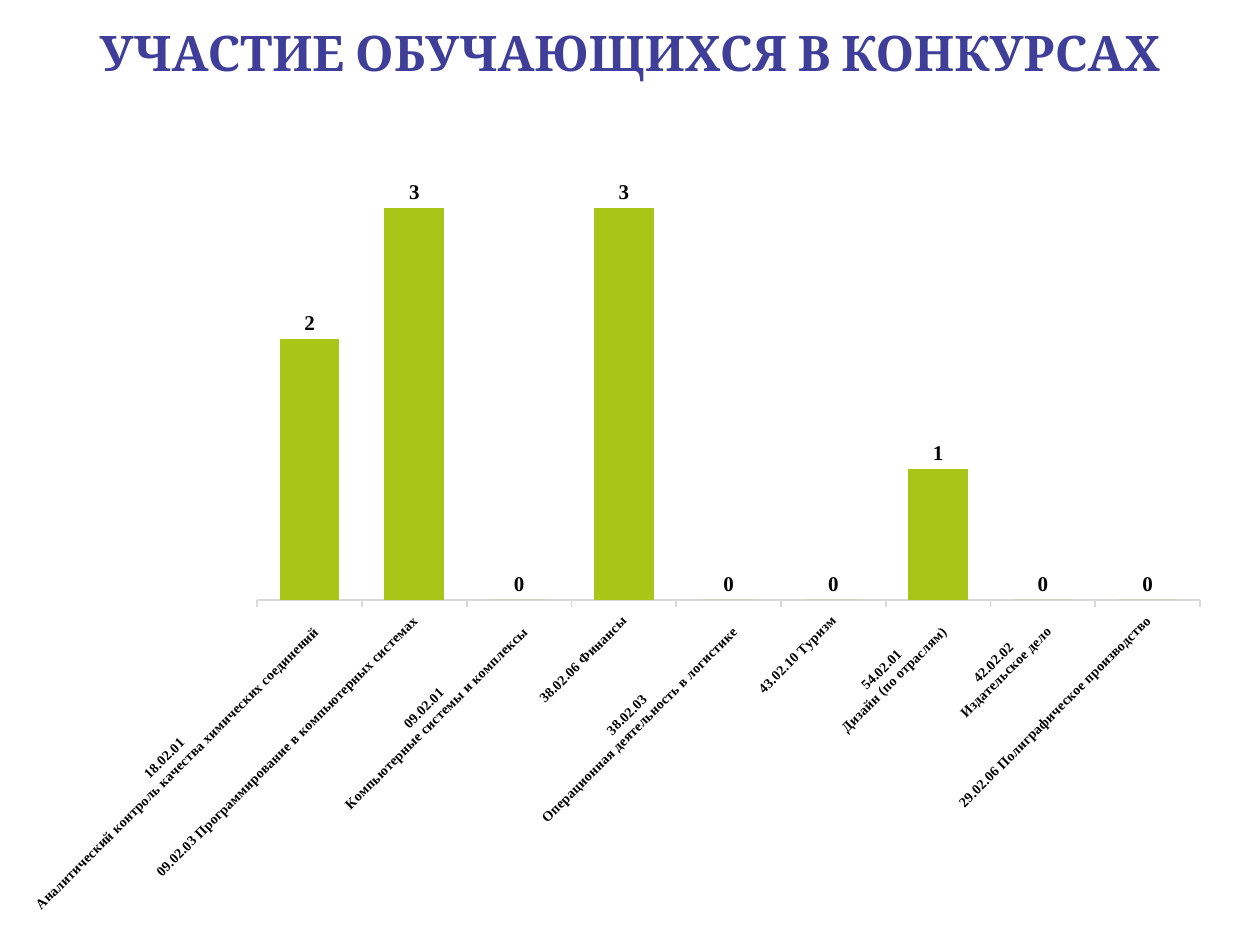
from pptx import Presentation
from pptx import util as u
from pptx.chart.data import CategoryChartData
from pptx.dml.color import RGBColor
from pptx.enum import chart as charts, text
from pptx.oxml import parse_xml
from pptx.oxml.ns import nsdecls

INDIGO = RGBColor(0x3F, 0x3F, 0x9A)
LIME = RGBColor(0xA9, 0xC6, 0x18)
BLACK = RGBColor(0, 0, 0)
GREY = RGBColor(0xD9, 0xD9, 0xD9)

RESULTS = [
    ("18.02.01 \nАналитический контроль качества химических соединений", 2),
    ("09.02.03 Программирование в компьютерных системах", 3),
    ("09.02.01 \nКомпьютерные системы и комплексы", 0),
    ("38.02.06 Финансы", 3),
    ("38.02.03 \nОперационная деятельность в логистике", 0),
    ("43.02.10 Туризм", 0),
    ("54.02.01 \nДизайн (по отраслям)", 1),
    ("42.02.02 \nИздательское дело", 0),
    ("29.02.06 Полиграфическое производство", 0),
]


def style_font(font, name, size, color, bold):
    font.name = name
    font.size = u.Pt(size)
    font.color.rgb = color
    font.bold = bold


def add_title(page, box, words):
    frame = page.shapes.add_textbox(*map(u.Inches, box)).text_frame
    frame.word_wrap = True
    frame.vertical_anchor = text.MSO_ANCHOR.TOP
    frame.text = words
    para = frame.paragraphs[0]
    para.alignment = text.PP_ALIGN.CENTER
    style_font(para.runs[0].font, "Cambria", 28, INDIGO, True)


def place_plot(chart, left, top, width, height):
    plot_area = chart.plots[0]._element.getparent()
    for old in plot_area.findall("{*}layout"):
        plot_area.remove(old)
    plot_area.insert(0, parse_xml(
        f'<c:layout {nsdecls("c")}><c:manualLayout><c:layoutTarget val="inner"/>'
        '<c:xMode val="edge"/><c:yMode val="edge"/>'
        f'<c:x val="{left}"/><c:y val="{top}"/><c:w val="{width}"/><c:h val="{height}"/>'
        '</c:manualLayout></c:layout>'))


def add_results_chart(page, box, results):
    data = CategoryChartData()
    data.categories = [name for name, count in results]
    data.add_series("Series 1", [count for name, count in results])
    chart = page.shapes.add_chart(
        charts.XL_CHART_TYPE.COLUMN_CLUSTERED, *map(u.Inches, box), data).chart
    chart.has_legend = False
    chart.has_title = False
    style_font(chart.font, "Times New Roman", 10, BLACK, False)

    values = chart.value_axis
    values.visible = False
    values.has_major_gridlines = False
    values.minimum_scale = 0
    values.maximum_scale = 3.5

    names = chart.category_axis
    names.major_tick_mark = charts.XL_TICK_MARK.OUTSIDE
    names.format.line.color.rgb = GREY
    names.format.line.width = u.Pt(1)
    style_font(names.tick_labels.font, "Times New Roman", 8, BLACK, True)
    body = names._element.find("{*}txPr/{*}bodyPr")
    body.set("rot", "-2700000")
    body.set("vert", "horz")

    plot = chart.plots[0]
    plot.gap_width = 75
    plot.vary_by_categories = False
    fill = plot.series[0].format.fill
    fill.solid()
    fill.fore_color.rgb = LIME
    plot.has_data_labels = True
    labels = plot.data_labels
    labels.show_value = True
    labels.position = charts.XL_LABEL_POSITION.OUTSIDE_END
    style_font(labels.font, "Times New Roman", 12, BLACK, True)
    place_plot(chart, 0.21, 0.02, 0.77, 0.57)


def main():
    deck = Presentation()
    deck.slide_width = u.Inches(10)
    deck.slide_height = u.Inches(7.5)
    page = deck.slides.add_slide(deck.slide_layouts[6])
    add_title(page, (0.5, 0.13, 9, 1.25), "УЧАСТИЕ ОБУЧАЮЩИХСЯ В КОНКУРСАХ")
    add_results_chart(page, (0, 1.01, 9.72, 6.36), RESULTS)
    deck.save("out.pptx")


if __name__ == "__main__":
    main()
